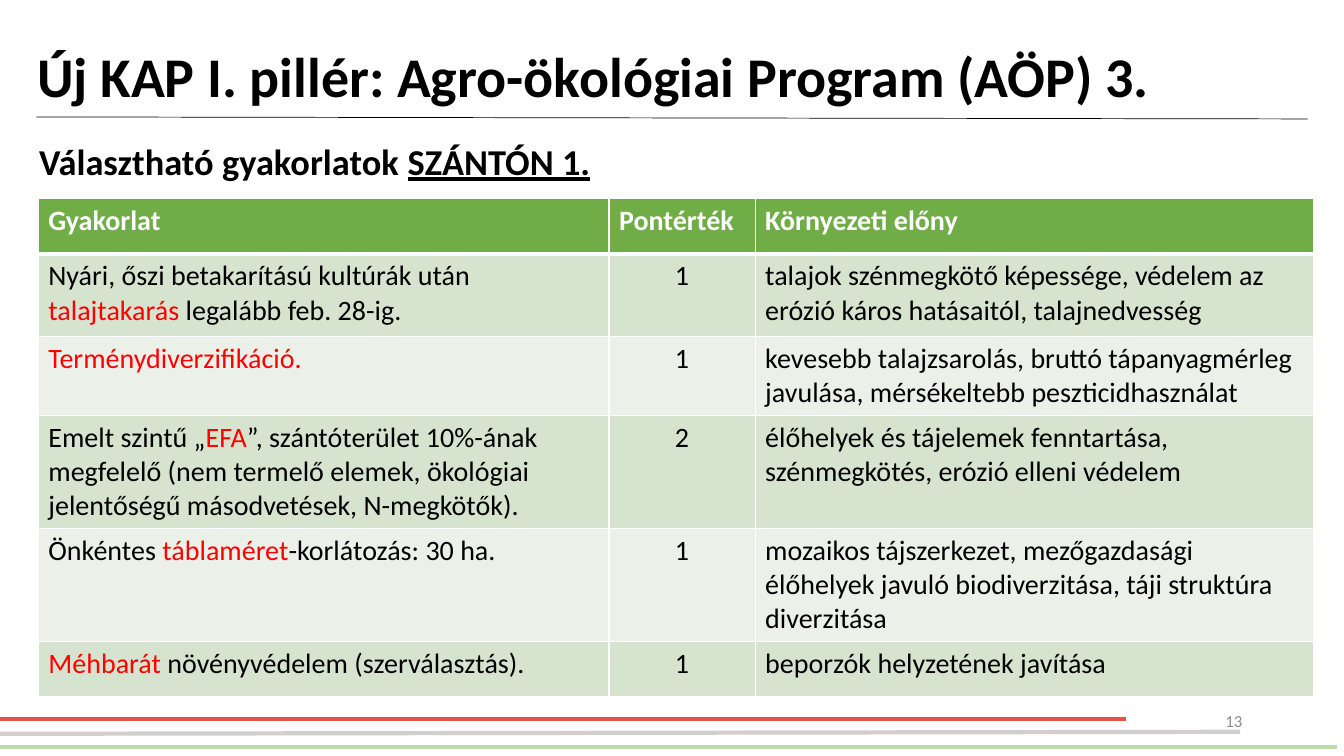
from dataclasses import dataclass

from lxml import etree
from pptx import Presentation
from pptx.dml.color import RGBColor
from pptx.enum.shapes import MSO_CONNECTOR as Connector
from pptx.enum.text import MSO_ANCHOR as Anchor, PP_ALIGN as Align
from pptx.oxml.ns import qn
from pptx.slide import Slide
from pptx.table import _Cell as Cell
from pptx.text.text import TextFrame
from pptx.util import Inches, Pt

FONT = "Calibri"
BLACK = RGBColor(0x00, 0x00, 0x00)
WHITE = RGBColor(0xFF, 0xFF, 0xFF)
RED = RGBColor(0xFF, 0x00, 0x00)
GREY = RGBColor(0x8C, 0x8C, 0x8C)
HEADER_GREEN = RGBColor(0x70, 0xAD, 0x47)
BAND_DARK = RGBColor(0xD5, 0xE3, 0xCF)
BAND_LIGHT = RGBColor(0xEB, 0xF1, 0xE9)
FOOTER_RED = RGBColor(0xDF, 0x56, 0x48)
FOOTER_GREEN = RGBColor(0xBE, 0xDC, 0xAA)
FOOTER_GREY = RGBColor(0xD0, 0xCE, 0xCE)


@dataclass(frozen=True)
class Span:
    text: str
    color: RGBColor | None = None
    underline: bool = False


@dataclass(frozen=True)
class Rule:
    start: tuple[float, float]
    end: tuple[float, float]
    color: RGBColor
    width: float = 3


@dataclass(frozen=True)
class Practice:
    description: tuple[Span, ...]
    points: int
    benefit: str
    height: float


RULES = (
    Rule((0, 7.13), (11.17, 7.13), FOOTER_RED),
    Rule((0, 7.41), (13.26, 7.41), FOOTER_GREEN),
    Rule((0, 7.28), (12.3, 7.26), FOOTER_GREY),
    Rule((0.36, 1.16), (12.97, 1.18), BLACK, 0.5),
)
HEADERS = ("Gyakorlat", "Pontérték", "Környezeti előny")
HEADER_HEIGHT = 0.55
COLUMN_WIDTHS = (5.66, 1.45, 5.54)
PRACTICES = (
    Practice(
        (Span("Nyári, őszi betakarítású kultúrák után "), Span("talajtakarás", RED),
         Span(" legalább feb. 28-ig.")),
        1, "talajok szénmegkötő képessége, védelem az erózió káros hatásaitól, talajnedvesség", 0.82),
    Practice(
        (Span("Terménydiverzifikáció.", RED),),
        1, "kevesebb talajzsarolás, bruttó tápanyagmérleg javulása, mérsékeltebb peszticidhasználat", 0.76),
    Practice(
        (Span("Emelt szintű „"), Span("EFA", RED),
         Span("”, szántóterület 10%-ának megfelelő (nem termelő elemek, ökológiai "
              "jelentőségű másodvetések, N-megkötők).")),
        2, "élőhelyek és tájelemek fenntartása, szénmegkötés, erózió elleni védelem", 0.82),
    Practice(
        (Span("Önkéntes "), Span("táblaméret", RED), Span("-korlátozás: 30 ha.")),
        1, "mozaikos tájszerkezet, mezőgazdasági élőhelyek javuló biodiverzitása, "
           "táji struktúra diverzitása", 0.94),
    Practice(
        (Span("Méhbarát", RED), Span(" növényvédelem (szerválasztás).")),
        1, "beporzók helyzetének javítása", 0.55),
)


def write_text(frame: TextFrame, *spans: Span, size: float, color: RGBColor = BLACK,
               bold: bool = False, align: Align = Align.LEFT,
               line_spacing: float | None = None) -> None:
    paragraph = frame.paragraphs[0]
    paragraph.alignment = align
    paragraph.line_spacing = line_spacing
    for span in spans:
        run = paragraph.add_run()
        run.text = span.text
        run.font.name = FONT
        run.font.size = Pt(size)
        run.font.bold = bold
        run.font.underline = span.underline
        run.font.color.rgb = span.color or color


def add_text_box(slide: Slide, left: float, top: float, width: float, height: float,
                 anchor: Anchor = Anchor.TOP) -> TextFrame:
    box = slide.shapes.add_textbox(Inches(left), Inches(top), Inches(width), Inches(height))
    box.text_frame.word_wrap = True
    box.text_frame.vertical_anchor = anchor
    return box.text_frame


def add_rule(slide: Slide, rule: Rule) -> None:
    connector = slide.shapes.add_connector(
        Connector.STRAIGHT, *map(Inches, rule.start + rule.end))
    connector.line.color.rgb = rule.color
    connector.line.width = Pt(rule.width)
    etree.SubElement(connector._element.spPr, qn("a:effectLst"))


def style_cell(cell: Cell, fill: RGBColor, top: float = 1, bottom: float = 1) -> None:
    """Give the cell white borders and a solid fill."""
    properties = cell._tc.get_or_add_tcPr()
    for side, width in (("L", 1), ("R", 1), ("T", top), ("B", bottom)):
        border = etree.SubElement(properties, qn(f"a:ln{side}"), w=str(Pt(width)))
        solid = etree.SubElement(border, qn("a:solidFill"))
        etree.SubElement(solid, qn("a:srgbClr"), val=str(WHITE))
    cell.fill.solid()
    cell.fill.fore_color.rgb = fill


def add_practice_table(slide: Slide) -> None:
    heights = [HEADER_HEIGHT, *(practice.height for practice in PRACTICES)]
    table = slide.shapes.add_table(
        len(heights), len(HEADERS), Inches(0.38), Inches(1.97),
        Inches(sum(COLUMN_WIDTHS)), Inches(sum(heights))).table
    for column, width in zip(table.columns, COLUMN_WIDTHS):
        column.width = Inches(width)
    for row, height in zip(table.rows, heights):
        row.height = Inches(height)

    for column_index, header in enumerate(HEADERS):
        cell = table.cell(0, column_index)
        style_cell(cell, HEADER_GREEN, bottom=3)
        write_text(cell.text_frame, Span(header), size=20, color=WHITE, bold=True)

    for row_index, practice in enumerate(PRACTICES, start=1):
        fill = BAND_DARK if row_index % 2 else BAND_LIGHT
        contents = (practice.description, (Span(str(practice.points)),), (Span(practice.benefit),))
        for column_index, spans in enumerate(contents):
            cell = table.cell(row_index, column_index)
            style_cell(cell, fill, top=3 if row_index == 1 else 1)
            write_text(cell.text_frame, *spans, size=20,
                       align=Align.CENTER if column_index == 1 else Align.LEFT)


def main() -> None:
    presentation = Presentation()
    presentation.slide_width = Inches(13.33)
    presentation.slide_height = Inches(7.5)
    slide = presentation.slides.add_slide(presentation.slide_layouts[6])

    for rule in RULES:
        add_rule(slide, rule)
    add_practice_table(slide)
    write_text(add_text_box(slide, 9.42, 6.95, 3, 0.4, Anchor.MIDDLE),
               Span("13"), size=12, color=GREY, align=Align.RIGHT)
    write_text(add_text_box(slide, 0.29, 1.33, 5.84, 0.54),
               Span("Választható gyakorlatok "), Span("SZÁNTÓN 1.", underline=True),
               size=26, bold=True)
    write_text(add_text_box(slide, 0.27, 0.06, 12.76, 1.45, Anchor.MIDDLE),
               Span("Új KAP I. pillér: Agro-ökológiai Program (AÖP) 3."),
               size=40, bold=True, line_spacing=0.9)
    presentation.save("out.pptx")


if __name__ == "__main__":
    main()
